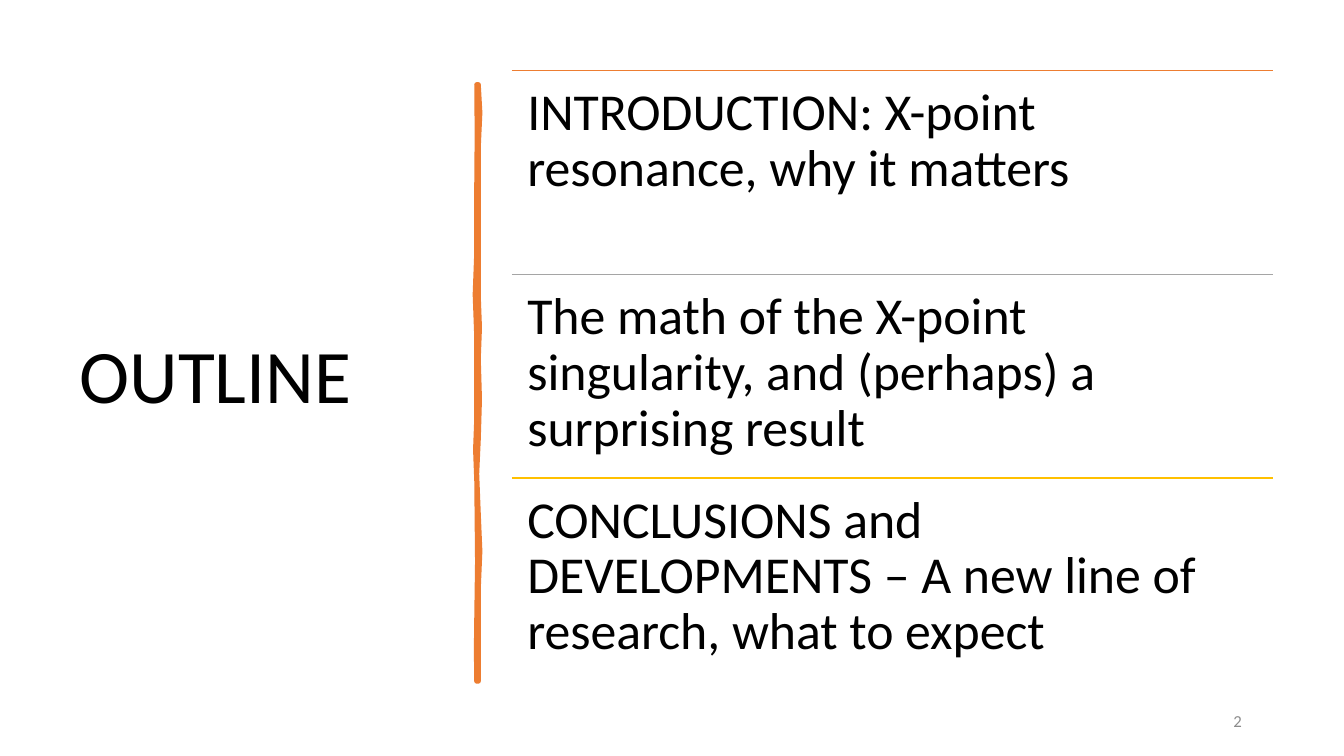
import dataclasses

import lxml.etree
import pptx
import pptx.dml.color
import pptx.enum.shapes
import pptx.enum.text
import pptx.oxml.ns
import pptx.util

Cm, Pt = pptx.util.Cm, pptx.util.Pt
ALIGN = pptx.enum.text.PP_ALIGN
ANCHOR = pptx.enum.text.MSO_ANCHOR


@dataclasses.dataclass(frozen=True)
class Theme:
    font: str = "Calibri"
    ink: str = "000000"
    grey: str = "8C8C8C"
    brush: str = "ED7D31"
    rules: tuple = ("ED7D31", "A5A5A5", "FFC000")
    title: float = 54
    body: float = 37
    small: float = 12


THEME = Theme()

TOPICS = (
    "INTRODUCTION: X-point resonance, why it matters",
    "The math of the X-point singularity, and (perhaps) a surprising result",
    "CONCLUSIONS and DEVELOPMENTS – A new line of research, what to expect",
)

# Brush outline in cm: down the right edge, then up the left
RIGHT = (
    (12.06, 2.13), (12.1, 2.84), (12.06, 3.71), (12.06, 5.74), (12.06, 7.47),
    (12.09, 8.26), (12.06, 9.04), (12.09, 10.06), (12.06, 11.07),
    (12.02, 11.94), (12.06, 12.95), (12.1, 13.89), (12.06, 14.83),
    (12.06, 17.17),
)
LEFT = (
    (12.01, 17.17), (12, 16.38), (12.01, 15.57), (12.03, 14.15),
    (12.01, 12.12), (11.98, 11.33), (12.01, 10.54), (12.01, 8.51),
    (11.97, 7.42), (12.01, 6.35), (12.01, 4.6), (12.02, 3.38), (12.01, 2.13),
)


def rgb(code):
    return pptx.dml.color.RGBColor.from_string(code)


def assign(item, values):
    for name, value in values.items():
        setattr(item, name, value)


def write(shape, text, size, color, align=ALIGN.LEFT, anchor=ANCHOR.TOP,
          space=1.0, inset=None):
    frame = shape.text_frame
    assign(frame, {"text": text, "word_wrap": True, "vertical_anchor": anchor,
                   "auto_size": pptx.enum.text.MSO_AUTO_SIZE.NONE})
    if inset is not None:
        sides = ("left", "top", "right", "bottom")
        assign(frame, {f"margin_{side}": inset for side in sides})
    para = frame.paragraphs[0]
    assign(para, {"alignment": align, "line_spacing": space})
    assign(para.runs[0].font, {"name": THEME.font, "size": Pt(size)})
    para.runs[0].font.color.rgb = rgb(color)


def rule(slide, left, top, width, color):
    line = slide.shapes.add_connector(
        pptx.enum.shapes.MSO_CONNECTOR.STRAIGHT,
        Cm(left), Cm(top), Cm(left + width), Cm(top))
    line.line.color.rgb = rgb(color)
    line.line.width = Pt(1)
    props = line._element.spPr
    lxml.etree.SubElement(props, pptx.oxml.ns.qn("a:effectLst"))


def topic(slide, text, color, top, left=12.9, width=19.18, height=5.13):
    rule(slide, left, top, width, color)
    box = slide.shapes.add_textbox(Cm(left), Cm(top), Cm(width), Cm(height))
    write(box, text, THEME.body, THEME.ink, space=0.9, inset=Cm(0.39))


def stroke(slide):
    points = [(Cm(x), Cm(y)) for x, y in RIGHT + LEFT]
    path = slide.shapes.build_freeform(*points[0])
    path.add_line_segments(points[1:], close=True)
    brush = path.convert_to_shape()
    brush.shadow.inherit = False
    brush.fill.solid()
    brush.fill.fore_color.rgb = rgb(THEME.brush)
    brush.line.color.rgb = rgb(THEME.brush)
    brush.line.width = Pt(3.25)


def main():
    deck = pptx.Presentation()
    assign(deck, {"slide_width": Cm(33.87), "slide_height": Cm(19.05)})
    slide = deck.slides.add_slide(deck.slide_layouts[5])

    # Title
    title = slide.shapes.title
    assign(title, {"left": Cm(1.75), "top": Cm(1.78),
                   "width": Cm(9.5), "height": Cm(15.52)})
    write(title, "OUTLINE", THEME.title, THEME.ink,
          anchor=ANCHOR.MIDDLE, space=0.9)

    # Divider
    stroke(slide)

    # Topics
    for row, (text, color) in enumerate(zip(TOPICS, THEME.rules)):
        topic(slide, text, color, 1.78 + row * 5.13)

    # Slide number
    number = slide.shapes.add_textbox(Cm(23.93), Cm(17.65), Cm(7.62), Cm(1.02))
    write(number, "2", THEME.small, THEME.grey, ALIGN.RIGHT, ANCHOR.MIDDLE)

    deck.save("out.pptx")


if __name__ == "__main__":
    main()
